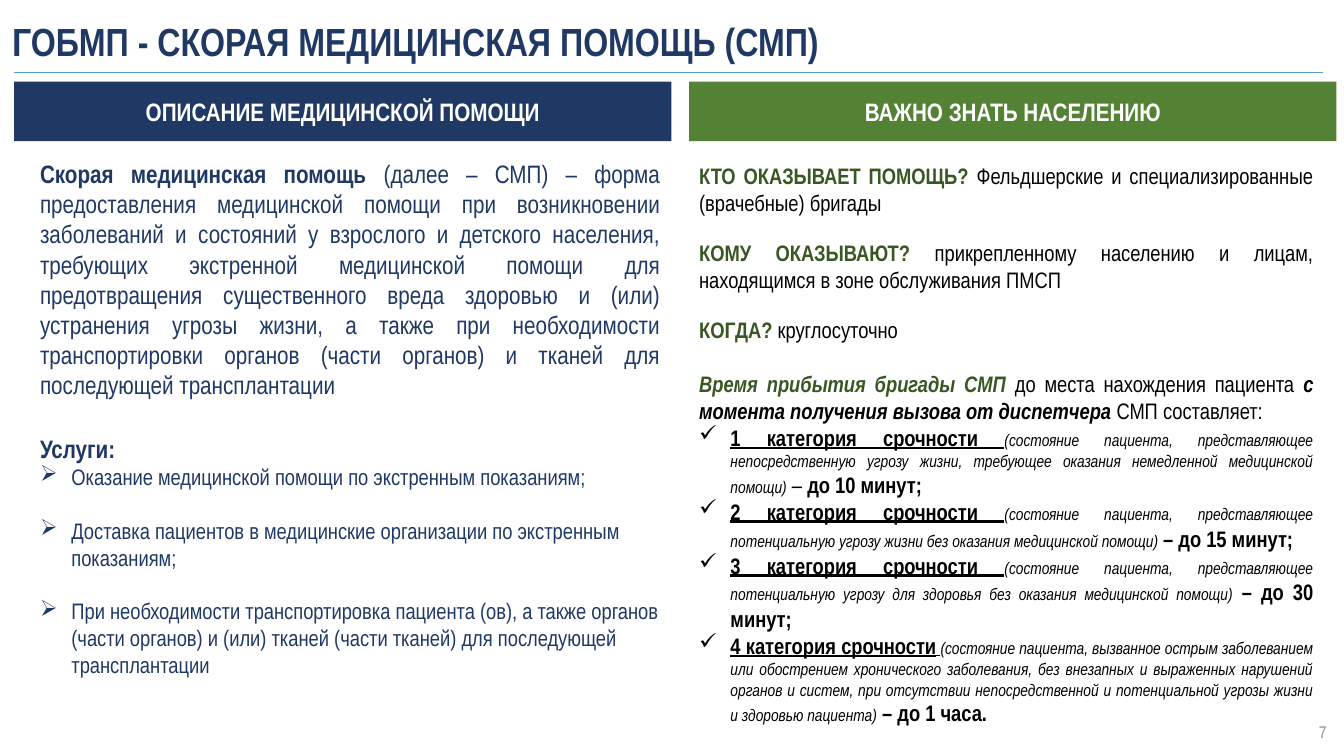
from lxml import etree
from pptx import Presentation
from pptx.dml.color import RGBColor
from pptx.enum.shapes import MSO_CONNECTOR, MSO_SHAPE
from pptx.enum.text import MSO_ANCHOR, MSO_AUTO_SIZE, PP_ALIGN
from pptx.oxml.ns import qn
from pptx.util import Cm, Pt

LEFT, CENTER, RIGHT, JUSTIFY = PP_ALIGN.LEFT, PP_ALIGN.CENTER, PP_ALIGN.RIGHT, PP_ALIGN.JUSTIFY
MIDDLE = MSO_ANCHOR.MIDDLE
NO_FIT = MSO_AUTO_SIZE.NONE
RECTANGLE = MSO_SHAPE.RECTANGLE
STRAIGHT = MSO_CONNECTOR.STRAIGHT
FONT = "Arial Narrow"
NAVY, GREEN, DARK_GREEN = "203864", "548235", "385723"
BLACK, WHITE, GRAY, BLUE = "000000", "FFFFFF", "8C8C8C", "5B9BD5"
HANGING = 0.79

DEFINITION = [
    ("Скорая медицинская помощь", 18, NAVY, "b"),
    (" (далее – СМП) – форма предоставления медицинской помощи при возникновении "
     "заболеваний и состояний у взрослого и детского населения, требующих экстренной "
     "медицинской помощи для предотвращения существенного вреда здоровью и (или) "
     "устранения угрозы жизни, а также при необходимости транспортировки органов "
     "(части органов) и тканей для последующей трансплантации", 18, NAVY, ""),
]
SERVICES = [
    "Оказание медицинской помощи по экстренным показаниям;",
    "Доставка пациентов в медицинские организации по экстренным показаниям;",
    "При необходимости транспортировка пациента (ов), а также органов (части органов) "
    "и (или) тканей (части тканей) для последующей трансплантации",
]
QUESTIONS = [
    ("КТО ОКАЗЫВАЕТ ПОМОЩЬ? ", "Фельдшерские и специализированные (врачебные) бригады "),
    ("КОМУ ОКАЗЫВАЮТ? ", "прикрепленному населению и лицам, находящимся в зоне обслуживания ПМСП"),
    ("КОГДА? ", "круглосуточно"),
]
ARRIVAL = [
    ("Время прибытия бригады СМП ", 16, DARK_GREEN, "bi"),
    ("до места нахождения пациента ", 16, BLACK, ""),
    ("с момента получения вызова от диспетчера", 16, BLACK, "bi"),
    (" СМП составляет:", 16, BLACK, ""),
]
URGENCY = [
    (("1 категория срочности ", 16, "bu"),
     ("(состояние пациента, представляющее непосредственную угрозу жизни, требующее "
      "оказания немедленной медицинской помощи)", 12, "i"),
     (" – ", 16, ""), ("до 10 минут;", 16, "b")),
    (("2 категория срочности ", 16, "bu"),
     ("(состояние пациента, представляющее потенциальную угрозу жизни без оказания "
      "медицинской помощи)", 12, "i"),
     (" ", 14, "b"), ("– до 15 минут;", 16, "b")),
    (("3 категория срочности ", 16, "bu"),
     ("(состояние пациента, представляющее потенциальную угрозу для здоровья без "
      "оказания медицинской помощи)", 12, "i"),
     (" ", 14, "b"), ("– до 30 минут;", 16, "b")),
    (("4 категория срочности", 16, "bu"), (" ", 12, "iu"),
     ("(состояние пациента, вызванное острым заболеванием или обострением хронического "
      "заболевания, без внезапных и выраженных нарушений органов и систем, при отсутствии "
      "непосредственной и потенциальной угрозы жизни и здоровью пациента)", 12, "i"),
     (" – до 1 часа.", 16, "b")),
]


def color(value):
    return RGBColor.from_string(value)


def write(para, spans, align=LEFT, before=0, spacing=1.0):
    para.alignment = align
    para.space_before = Pt(before)
    para.line_spacing = spacing
    for text, size, tint, style in spans:
        span = para.add_run()
        span.text = text
        font = span.font
        font.name, font.size = FONT, Pt(size)
        font.color.rgb = color(tint)
        font.bold, font.italic, font.underline = ("b" in style, "i" in style, "u" in style)
    return para


def indent(para, margin, hanging=0, bullet=None):
    properties = para._p.get_or_add_pPr()
    properties.set("marL", str(Cm(margin)))
    properties.set("indent", str(-Cm(hanging)))
    if bullet:
        etree.SubElement(properties, qn("a:buChar")).set("char", bullet)


def next_paragraph(frame):
    first = frame.paragraphs[0]
    return frame.add_paragraph() if first.runs else first


def text_frame(page, box):
    frame = page.shapes.add_textbox(*map(Cm, box)).text_frame
    frame.word_wrap = True
    return frame


def add_title(page, box):
    left, top, width, height = box
    title = page.shapes.title
    title.left, title.top, title.width, title.height = map(Cm, box)
    frame = title.text_frame
    frame.auto_size = NO_FIT
    frame.vertical_anchor = MIDDLE
    heading = "ГОБМП - СКОРАЯ МЕДИЦИНСКАЯ ПОМОЩЬ (СМП)"
    write(frame.paragraphs[0], [(heading, 28, NAVY, "b")], spacing=0.9)
    level = Cm(top + height)
    rule = page.shapes.add_connector(STRAIGHT, Cm(left + 0.31), level, Cm(left + width - 0.5), level)
    rule.line.color.rgb = color(BLUE)
    rule.line.width = Pt(0.5)
    etree.SubElement(rule._element.spPr, qn("a:effectLst"))


def add_header(page, box, text, fill):
    header = page.shapes.add_shape(RECTANGLE, *map(Cm, box))
    header.shadow.inherit = False
    header.fill.solid()
    header.fill.fore_color.rgb = color(fill)
    header.line.fill.background()
    header.text_frame.vertical_anchor = MIDDLE
    write(header.text_frame.paragraphs[0], [(text, 18, WHITE, "b")], CENTER)


def add_description(page, box):
    left, top, width, height = box
    add_header(page, (left, top, width, 1.5), "ОПИСАНИЕ МЕДИЦИНСКОЙ ПОМОЩИ", NAVY)
    frame = text_frame(page, (left + 0.1, top + 1.8, width - 0.13, height - 1.8))
    indent(write(next_paragraph(frame), DEFINITION, JUSTIFY), 0.3)
    services = write(next_paragraph(frame), [("Услуги:", 18, NAVY, "b")], before=12.6, spacing=1.5)
    indent(services, 0.3)
    for index, service in enumerate(SERVICES):
        para = write(next_paragraph(frame), [(service, 16, NAVY, "")], before=19.2 if index else 0)
        indent(para, 0.3 + HANGING, HANGING, "➢")


def add_guidance(page, box):
    left, top, width, height = box
    add_header(page, (left, top, width, 1.5), "ВАЖНО ЗНАТЬ НАСЕЛЕНИЮ", GREEN)
    frame = text_frame(page, (left, top + 1.9, width - 0.33, height - 1.9))
    for index, (question, answer) in enumerate(QUESTIONS):
        spans = [(question, 16, DARK_GREEN, "b"), (answer, 16, BLACK, "")]
        write(next_paragraph(frame), spans, JUSTIFY, before=16.8 if index else 0)
    write(next_paragraph(frame), ARRIVAL, JUSTIFY, before=19.2)
    for category in URGENCY:
        spans = [(text, size, BLACK, style) for text, size, style in category]
        indent(write(next_paragraph(frame), spans, JUSTIFY), HANGING, HANGING, "✓")


def add_page_number(page, box):
    frame = text_frame(page, box)
    frame.vertical_anchor = MIDDLE
    write(frame.paragraphs[0], [("7", 12, GRAY, "")], RIGHT)


def main():
    deck = Presentation()
    deck.slide_width, deck.slide_height = Cm(33.87), Cm(19.05)
    page = deck.slides.add_slide(deck.slide_layouts[5])
    add_title(page, (0.05, 0.4, 33.8, 1.43))
    add_description(page, (0.36, 2.06, 16.56, 15.54))
    add_guidance(page, (17.37, 2.06, 16.31, 16.95))
    add_page_number(page, (32.66, 17.93, 1.02, 1.02))
    deck.save("out.pptx")


if __name__ == "__main__":
    main()
